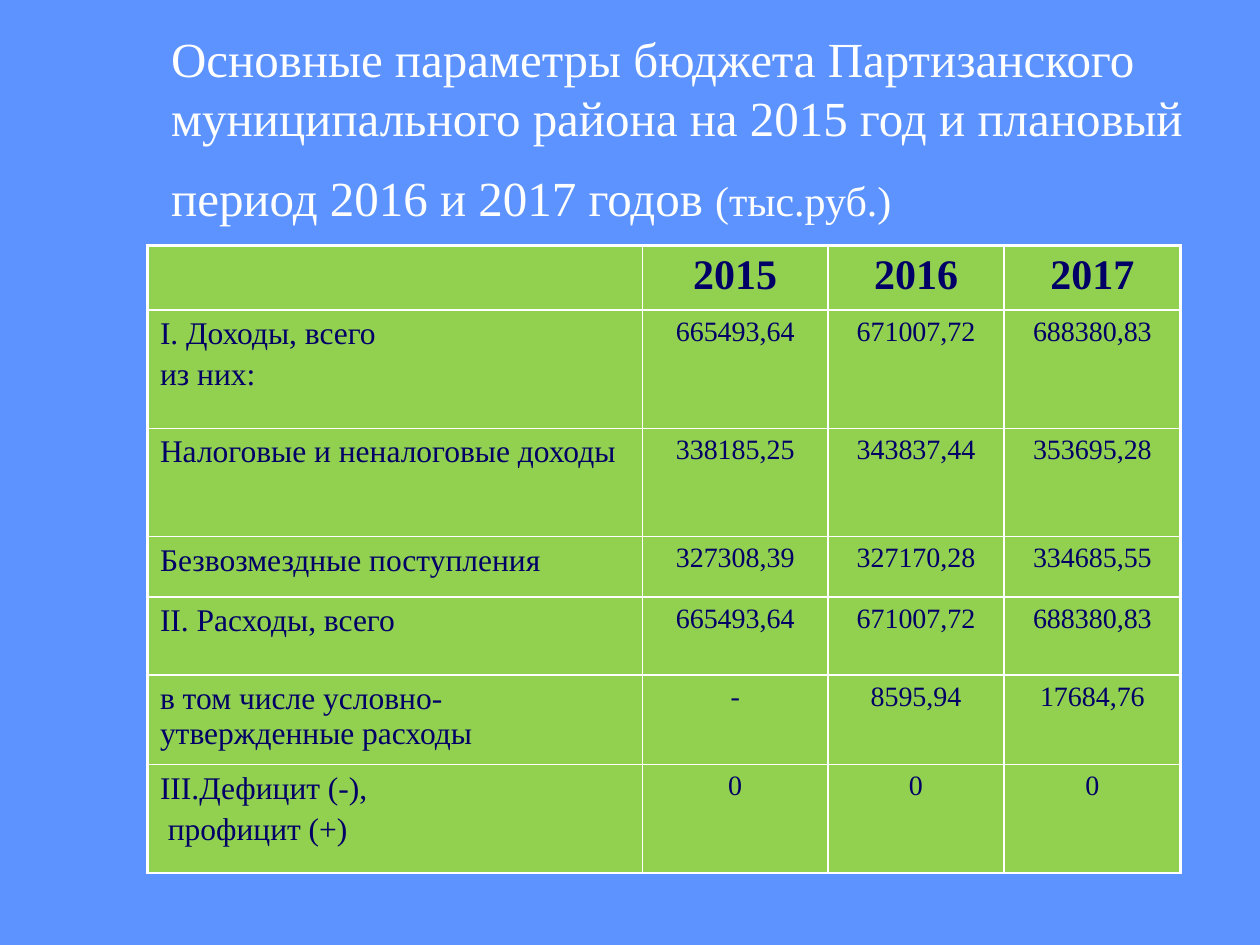
from dataclasses import dataclass
from lxml import etree
from pptx import Presentation
from pptx.dml.color import RGBColor
from pptx.enum.text import MSO_ANCHOR, PP_ALIGN
from pptx.oxml.ns import qn
from pptx.util import Inches, Pt

MIDDLE = MSO_ANCHOR.MIDDLE
LEFT, CENTER = PP_ALIGN.LEFT, PP_ALIGN.CENTER


@dataclass(frozen=True)
class Theme:
    back: str = "5D93FF"
    green: str = "92D050"
    navy: str = "000066"
    white: str = "FFFFFF"
    face: str = "Times New Roman"
    tail: str = "Lato"
    title: int = 28
    unit: int = 24
    space: int = 40
    head: int = 24
    label: int = 18
    value: int = 16
    thin: float = 1
    thick: float = 2.25


T = Theme()
COLS = [3.93, 1.47, 1.4, 1.4]
ROWS = [0.51, 0.94, 0.86, 0.48, 0.62, 0.71, 0.86]
DATA = [
    ["", "2015", "2016", "2017"],
    ["I. Доходы, всего\nиз них:", "665493,64", "671007,72", "688380,83"],
    ["Налоговые и неналоговые доходы", "338185,25", "343837,44", "353695,28"],
    ["Безвозмездные поступления", "327308,39", "327170,28", "334685,55"],
    ["II. Расходы, всего", "665493,64", "671007,72", "688380,83"],
    ["в том числе условно-утвержденные расходы", "-", "8595,94", "17684,76"],
    ["III.Дефицит (-),\n профицит (+)", "0", "0", "0"],
]
TITLE = [
    ("Основные параметры бюджета Партизанского муниципального района "
     "на 2015 год и плановый период 2016 и 2017 годов ", T.title, T.face),
    ("(тыс.руб.)", T.unit, T.face),
    (" ", T.space, T.tail),
]


def style(font, size, color, face=T.face, bold=False):
    font.name = face
    font.size = Pt(size)
    font.bold = bold
    font.color.rgb = RGBColor.from_string(color)


def add_title(slide):
    box = slide.shapes.add_textbox(
        Inches(1.26), Inches(0.23), Inches(8.52), Inches(1.6))
    frame = box.text_frame
    frame.word_wrap = True
    frame.vertical_anchor = MIDDLE
    for text, size, face in TITLE:
        run = frame.paragraphs[0].add_run()
        run.text = text
        style(run.font, size, T.white, face)


def add_edge(cell, side, width):
    props = cell._tc.get_or_add_tcPr()
    line = etree.SubElement(props, qn(f"a:ln{side}"), w=str(Pt(width)))
    fill = etree.SubElement(line, qn("a:solidFill"))
    etree.SubElement(fill, qn("a:srgbClr"), val=T.white)


def fill_cell(cell, text, row, col):
    outer = {"L": col == 0, "R": col == len(COLS) - 1, "T": row == 0, "B": False}
    for side, edge in outer.items():
        add_edge(cell, side, T.thick if edge else T.thin)
    cell.fill.solid()
    cell.fill.fore_color.rgb = RGBColor.from_string(T.green)
    size = T.head if row == 0 else T.value if col else T.label
    cell.text = text
    for i, para in enumerate(cell.text_frame.paragraphs):
        para.alignment = CENTER if col else LEFT
        if i:
            para.space_before = Pt(size * 0.2)
        style(para.font, size, T.navy, bold=row == 0)


def add_grid(slide):
    table = slide.shapes.add_table(
        len(ROWS), len(COLS), Inches(1.17), Inches(1.95),
        Inches(sum(COLS)), Inches(sum(ROWS))).table
    table.horz_banding = False
    for col, width in zip(table.columns, COLS):
        col.width = Inches(width)
    for row, height in zip(table.rows, ROWS):
        row.height = Inches(height)
    for r, line in enumerate(DATA):
        for c, text in enumerate(line):
            fill_cell(table.cell(r, c), text, r, c)


def main():
    deck = Presentation()
    deck.slide_width, deck.slide_height = Inches(10), Inches(7.5)
    slide = deck.slides.add_slide(deck.slide_layouts[6])
    fill = slide.background.fill
    fill.solid()
    fill.fore_color.rgb = RGBColor.from_string(T.back)
    add_title(slide)
    add_grid(slide)
    deck.save("out.pptx")


if __name__ == "__main__":
    main()
